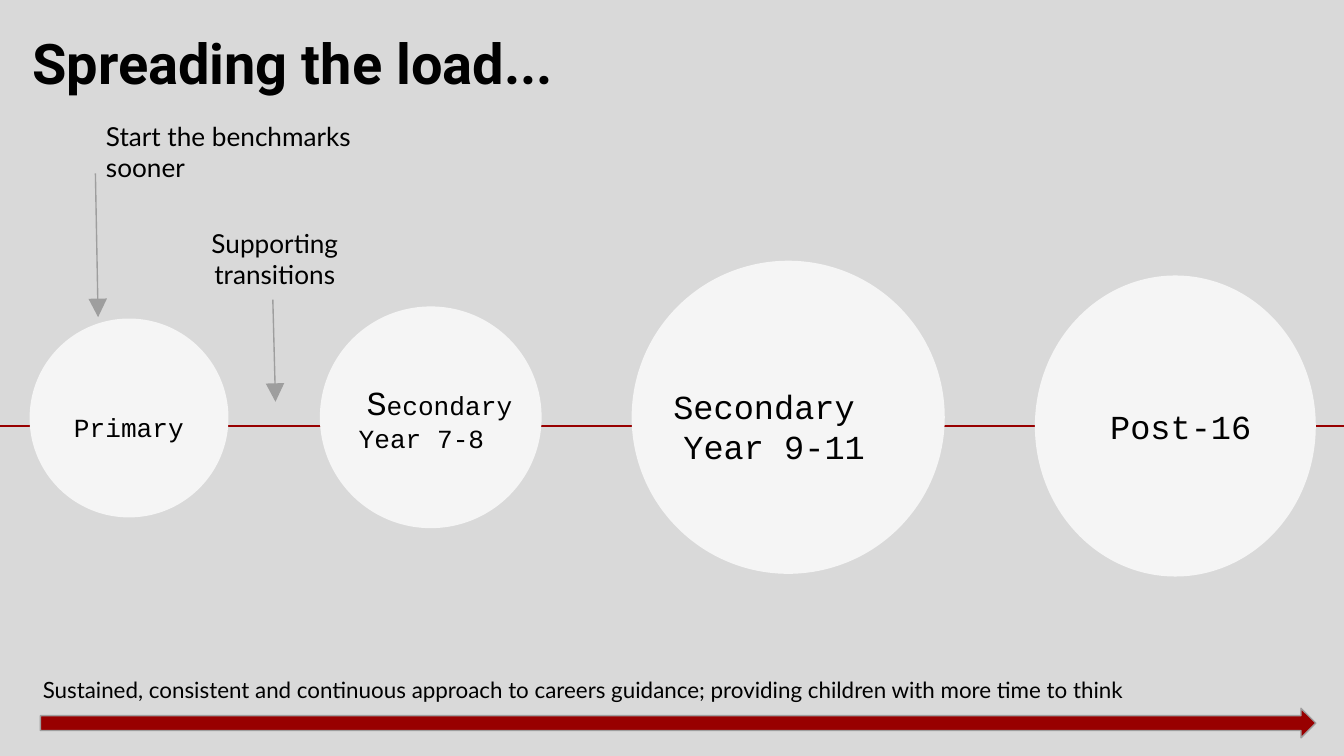
from dataclasses import dataclass

from lxml import etree
from pptx import Presentation
from pptx import util as u
from pptx.dml.color import RGBColor
from pptx.enum import shapes, text
from pptx.oxml.ns import qn


@dataclass(frozen=True)
class Theme:
    background: str = "D9D9D9"
    accent: str = "980000"
    circle: str = "F5F5F5"
    grey: str = "9E9E9E"
    ink: str = "000000"
    title_font: str = "Roboto"
    stage_font: str = "Courier New"
    note_font: str = "Lato"
    title_size: int = 30
    large: int = 18
    medium: int = 14
    small: int = 12


@dataclass(frozen=True)
class Box:
    left: float
    top: float
    width: float
    height: float

    def lengths(self) -> tuple:
        return tuple(u.Inches(n) for n in (self.left, self.top, self.width, self.height))


@dataclass(frozen=True)
class Stage:
    circle: Box
    label: Box
    lines: tuple  # each line is a tuple of (words, size) runs


@dataclass(frozen=True)
class Note:
    box: Box
    words: str
    size: int
    align: text.PP_ALIGN = text.PP_ALIGN.LEFT


THEME = Theme()

STAGES = (
    Stage(Box(0.22, 2.37, 1.48, 1.48), Box(0.22, 2.91, 1.48, 0.53),
          ((("Primary", THEME.medium),),)),
    Stage(Box(4.7, 1.94, 2.33, 2.33), Box(4.25, 2.84, 3.02, 0.66),
          ((("Secondary ", THEME.large),), (("Year 9-11", THEME.large),))),
    Stage(Box(2.38, 2.28, 1.65, 1.65), Box(2.47, 2.82, 1.45, 0.58),
          (((" S", THEME.large), ("econdary", THEME.medium)),
           (("Year 7-8 ", THEME.medium),))),
    Stage(Box(7.7, 2.05, 2.09, 2.24), Box(8.12, 2.84, 1.33, 0.66),
          ((("Post-16", THEME.large),),)),
)

NOTES = (
    Note(Box(0.22, 4.93, 9.87, 0.48),
         "Sustained, consistent and continuous approach to careers guidance; "
         "providing children with more time to think", THEME.small),
    Note(Box(1.3, 1.59, 1.49, 0.24), "Supporting transitions", THEME.medium,
         text.PP_ALIGN.CENTER),
    Note(Box(0.69, 0.85, 2.46, 0.09), "Start the benchmarks sooner", THEME.medium),
)

POINTERS = (((2.03, 2.23), (2.05, 2.99)), ((0.71, 1.29), (0.73, 2.36)))


def color(value: str) -> RGBColor:
    return RGBColor.from_string(value)


def style_run(run, font: str, size: int, bold: bool = False) -> None:
    run.font.name = font
    run.font.size = u.Pt(size)
    run.font.bold = bold
    run.font.color.rgb = color(THEME.ink)


def prepare_frame(frame, anchor: text.MSO_ANCHOR) -> None:
    frame.word_wrap = True
    frame.auto_size = text.MSO_AUTO_SIZE.NONE
    frame.vertical_anchor = anchor
    frame.margin_left = frame.margin_right = u.Inches(0.1)
    frame.margin_top = frame.margin_bottom = u.Inches(0.1)


def add_title(slide, box: Box, words: str) -> None:
    title = slide.shapes.title
    title.left, title.top, title.width, title.height = box.lengths()
    prepare_frame(title.text_frame, text.MSO_ANCHOR.TOP)
    title.text_frame.text = words
    paragraph = title.text_frame.paragraphs[0]
    paragraph.alignment = text.PP_ALIGN.LEFT
    style_run(paragraph.runs[0], THEME.title_font, THEME.title_size, bold=True)


def add_text(slide, box: Box, lines: tuple, font: str, align: text.PP_ALIGN,
             anchor: text.MSO_ANCHOR) -> None:
    frame = slide.shapes.add_textbox(*box.lengths()).text_frame
    prepare_frame(frame, anchor)
    for index, runs in enumerate(lines):
        paragraph = frame.add_paragraph() if index else frame.paragraphs[0]
        paragraph.alignment = align
        for words, size in runs:
            run = paragraph.add_run()
            run.text = words
            style_run(run, font, size)


def add_filled(slide, kind: shapes.MSO_SHAPE, box: Box, fill: str):
    shape = slide.shapes.add_shape(kind, *box.lengths())
    shape.shadow.inherit = False
    shape.fill.solid()
    shape.fill.fore_color.rgb = color(fill)
    shape.line.fill.background()
    return shape


def add_line(slide, start: tuple, end: tuple, line_color: str, width: float,
             arrow: bool = False) -> None:
    connector = slide.shapes.add_connector(
        shapes.MSO_CONNECTOR.STRAIGHT, *(u.Inches(n) for n in (*start, *end)))
    connector.line.color.rgb = color(line_color)
    connector.line.width = u.Pt(width)
    if arrow:
        etree.SubElement(connector.line._get_or_add_ln(), qn("a:tailEnd"),
                         type="triangle", w="lg", len="lg")
    etree.SubElement(connector._element.spPr, qn("a:effectLst"))


def add_stage(slide, stage: Stage) -> None:
    add_filled(slide, shapes.MSO_SHAPE.OVAL, stage.circle, THEME.circle)
    add_text(slide, stage.label, stage.lines, THEME.stage_font,
             text.PP_ALIGN.CENTER, text.MSO_ANCHOR.MIDDLE)


def main() -> None:
    presentation = Presentation()
    # Widescreen, 16:9
    presentation.slide_width = u.Inches(10)
    presentation.slide_height = presentation.slide_width * 9 // 16
    slide = presentation.slides.add_slide(presentation.slide_layouts[5])
    slide.background.fill.solid()
    slide.background.fill.fore_color.rgb = color(THEME.background)

    # Timeline with its school stages
    add_line(slide, (-0.01, 3.17), (10, 3.17), THEME.accent, 1.5)
    add_title(slide, Box(0.14, 0.11, 9.32, 0.63), "Spreading the load...")
    for stage in STAGES:
        add_stage(slide, stage)

    # Long arrow along the bottom
    progress = add_filled(slide, shapes.MSO_SHAPE.RIGHT_ARROW,
                          Box(0.3, 5.27, 9.49, 0.22), THEME.accent)
    progress.line.color.rgb = color(THEME.grey)
    progress.line.width = u.Pt(0.75)

    # Notes and their pointers
    for note in NOTES:
        add_text(slide, note.box, (((note.words, note.size),),), THEME.note_font,
                 note.align, text.MSO_ANCHOR.TOP)
    for start, end in POINTERS:
        add_line(slide, start, end, THEME.grey, 0.75, arrow=True)

    presentation.save("out.pptx")


if __name__ == "__main__":
    main()
